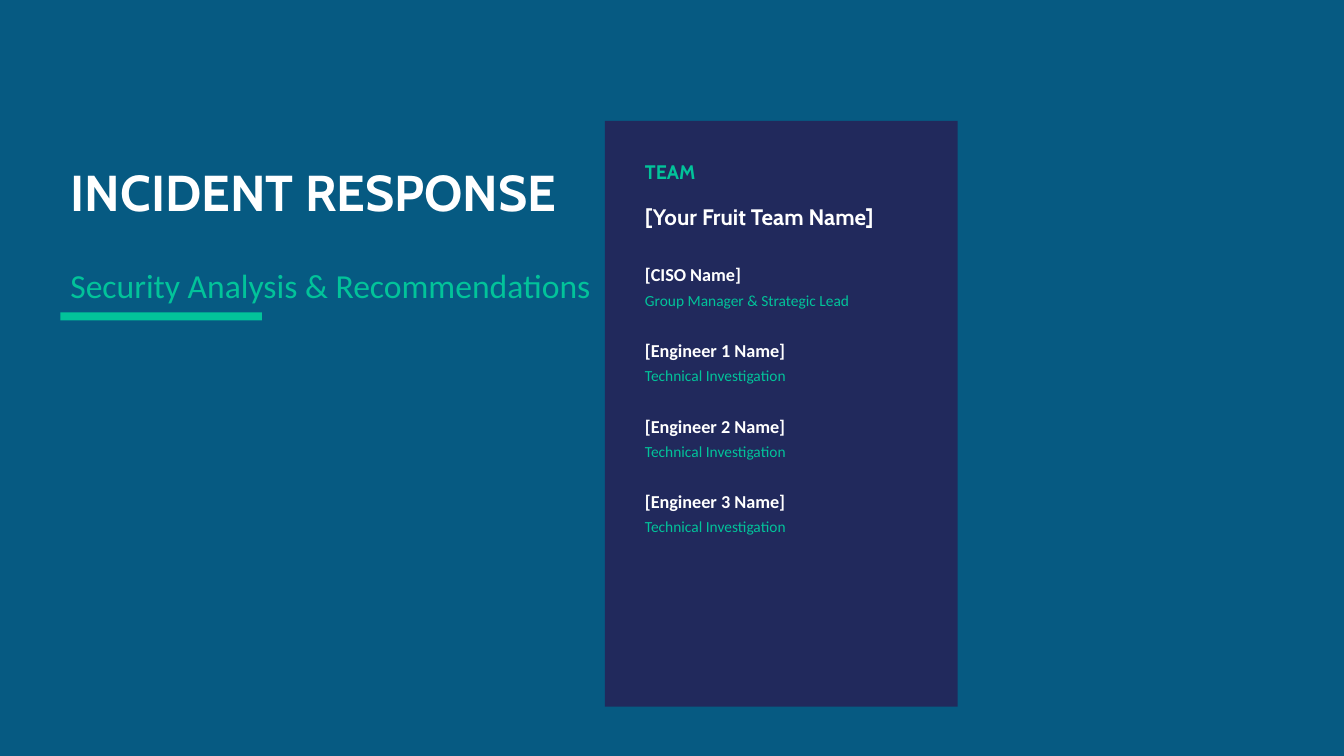
from pptx import Presentation
from pptx.dml.color import RGBColor
from pptx.enum.shapes import MSO_SHAPE
from pptx.enum.text import MSO_ANCHOR, MSO_AUTO_SIZE, PP_ALIGN
from pptx.util import Pt

RECTANGLE = MSO_SHAPE.RECTANGLE
MIDDLE = MSO_ANCHOR.MIDDLE
NO_AUTOFIT = MSO_AUTO_SIZE.NONE
LEFT = PP_ALIGN.LEFT

TEAL = RGBColor(0x06, 0x5A, 0x82)
NAVY = RGBColor(0x21, 0x29, 0x5C)
MINT = RGBColor(0x02, 0xC3, 0x9A)
WHITE = RGBColor(0xFF, 0xFF, 0xFF)

HEADING_FONT = "Cabin"
BODY_FONT = "Calibri"
TITLE_ONLY = 5

MEMBERS = [
    ("[CISO Name]", "Group Manager & Strategic Lead"),
    ("[Engineer 1 Name]", "Technical Investigation"),
    ("[Engineer 2 Name]", "Technical Investigation"),
    ("[Engineer 3 Name]", "Technical Investigation"),
]


class Deck:
    """Holds the presentation, its style and the current slide."""

    def __init__(self, width, height):
        self.presentation = Presentation()
        self.presentation.slide_width = Pt(width)
        self.presentation.slide_height = Pt(height)
        self.slide = None

    def add_slide(self, background):
        layout = self.presentation.slide_layouts[TITLE_ONLY]
        self.slide = self.presentation.slides.add_slide(layout)
        fill = self.slide.background.fill
        fill.solid()
        fill.fore_color.rgb = background

    def set_text(self, box, text, size, color, font, bold):
        frame = box.text_frame
        frame.text = text
        frame.word_wrap = True
        frame.auto_size = NO_AUTOFIT
        frame.vertical_anchor = MIDDLE
        paragraph = frame.paragraphs[0]
        paragraph.alignment = LEFT
        paragraph.font.size = Pt(size)
        paragraph.font.name = font
        paragraph.font.bold = bold
        paragraph.font.color.rgb = color

    def title(self, text, left, top, width, height, size, color):
        heading = self.slide.shapes.title
        heading.left, heading.top = Pt(left), Pt(top)
        heading.width, heading.height = Pt(width), Pt(height)
        self.set_text(heading, text, size, color, HEADING_FONT, True)

    def text(self, text, left, top, width, height, size, color,
             font=BODY_FONT, bold=False):
        box = self.slide.shapes.add_textbox(
            Pt(left), Pt(top), Pt(width), Pt(height))
        self.set_text(box, text, size, color, font, bold)

    def block(self, left, top, width, height, color):
        block = self.slide.shapes.add_shape(
            RECTANGLE, Pt(left), Pt(top), Pt(width), Pt(height))
        block.shadow.inherit = False
        block.fill.solid()
        block.fill.fore_color.rgb = color
        block.line.fill.background()


def main():
    deck = Deck(960, 540)
    deck.add_slide(TEAL)

    # Title, subtitle and accent bar
    margin = 43.2
    deck.title("INCIDENT RESPONSE", margin, 108, 432, 57.6, 36, WHITE)
    deck.text("Security Analysis & Recommendations",
              margin, 185.76, 432, 36, 24, MINT)
    deck.block(margin, 223.2, 144, 5.76, MINT)

    # Team panel
    panel_left, panel_width, padding = 432, 252, 21.6
    deck.block(panel_left, 86.4, panel_width, 418.32, NAVY)
    team_left = panel_left + padding
    team_width = panel_width - 36
    deck.text("TEAM", team_left, 108, team_width, 28.8, 14, MINT,
              HEADING_FONT, True)
    deck.text("[Your Fruit Team Name]", team_left, 136.8, team_width, 36,
              16, WHITE, HEADING_FONT, True)

    # Members: name above role, at an even pitch
    first_top, pitch, row = 187.2, 54, 18
    for index, (name, role) in enumerate(MEMBERS):
        top = first_top + index * pitch
        deck.text(name, team_left, top, team_width, row, 13, WHITE, bold=True)
        deck.text(role, team_left, top + row, team_width, row, 11, MINT)

    deck.presentation.save("out.pptx")


if __name__ == "__main__":
    main()
